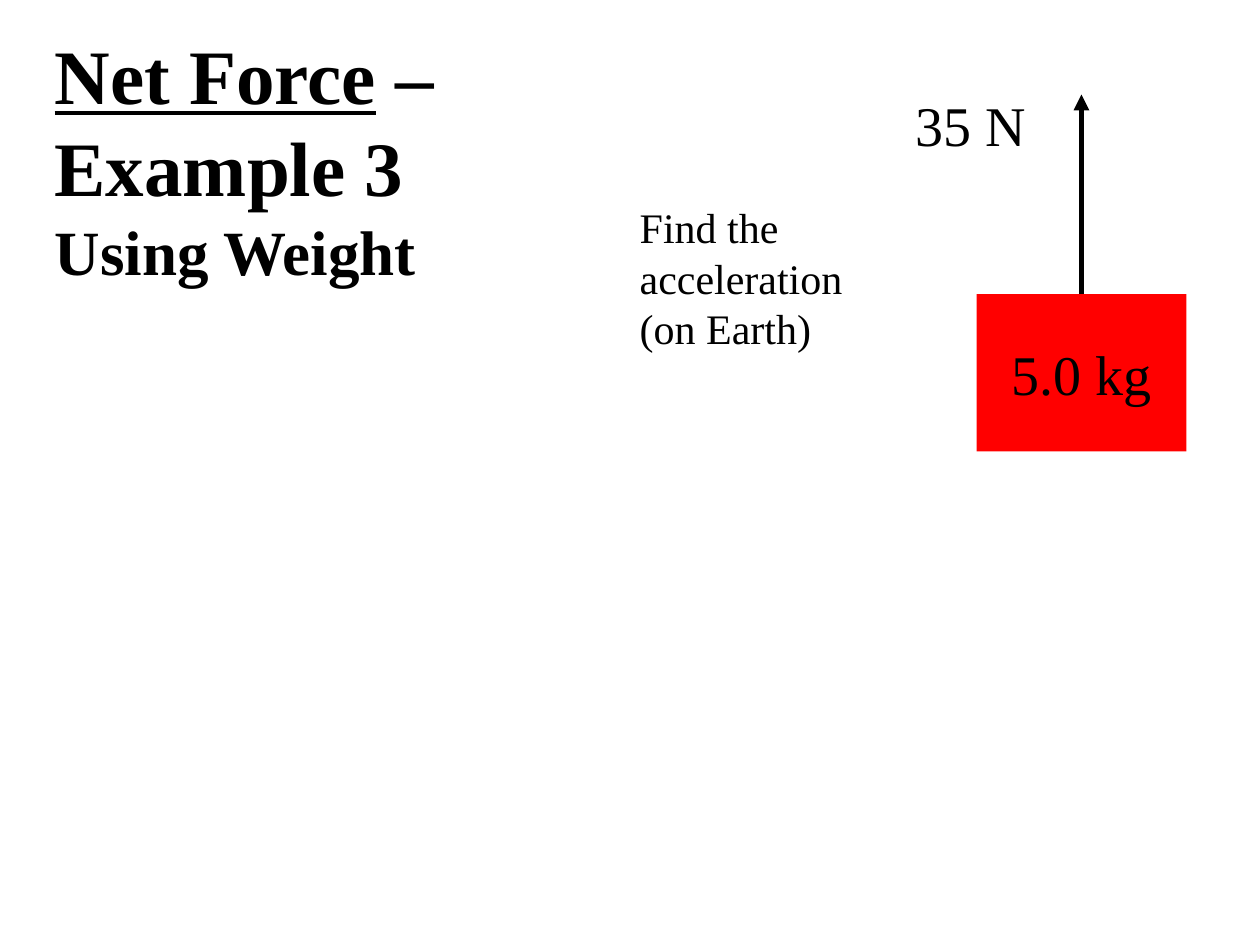
from dataclasses import dataclass

from lxml import etree
from pptx import Presentation
from pptx import util as u
from pptx.dml.color import RGBColor
from pptx.enum import shapes, text
from pptx.oxml import ns

SCALE = 9525  # EMU per px, 96 px to the inch


@dataclass(frozen=True)
class Theme:
    font: str = "Times New Roman"
    ink: RGBColor = RGBColor(0, 0, 0)
    block: RGBColor = RGBColor(255, 0, 0)
    title: int = 44
    sub: int = 36
    label: int = 32
    body: int = 24
    line: int = 3


@dataclass(frozen=True)
class Box:
    left: int
    top: int
    width: int
    height: int

    def emu(self) -> list[int]:
        return [px(n) for n in (self.left, self.top, self.width, self.height)]


@dataclass(frozen=True)
class Note:
    box: Box
    lines: list[str]
    size: int
    wrap: bool


THEME = Theme()
TITLE = Box(32, 16, 408, 208)
BLOCK = Box(744, 224, 160, 120)
NOTES = [
    Note(Box(688, 64, 104, 60), ["35 N"], THEME.label, False),
    Note(Box(478, 149, 287, 86), ["Find the\vacceleration", "(on Earth)"],
         THEME.body, True),
]


def px(n: int) -> int:
    return n * SCALE


def style(font, size: int) -> None:
    font.name = THEME.font
    font.size = u.Pt(size)
    font.color.rgb = THEME.ink


def write(frame, lines: list[str], size: int) -> None:
    frame.text = "\n".join(lines)
    for para in frame.paragraphs:
        style(para.font, size)


def add_title(slide) -> None:
    shape = slide.shapes.title
    shape.left, shape.top, shape.width, shape.height = TITLE.emu()
    frame = shape.text_frame
    frame.word_wrap = True
    frame.auto_size = text.MSO_AUTO_SIZE.NONE
    frame.vertical_anchor = text.MSO_ANCHOR.TOP
    para = frame.paragraphs[0]
    para.alignment = text.PP_ALIGN.LEFT
    for part, size, under in (
        ("Net Force", THEME.title, True),
        (" – Example 3 ", THEME.title, False),
        ("Using Weight", THEME.sub, False),
    ):
        run = para.add_run()
        run.text = part
        style(run.font, size)
        run.font.bold = True
        run.font.underline = under


def add_block(slide) -> None:
    shape = slide.shapes.add_shape(shapes.MSO_SHAPE.RECTANGLE, *BLOCK.emu())
    shape.shadow.inherit = False
    shape.fill.solid()
    shape.fill.fore_color.rgb = THEME.block
    shape.line.fill.background()
    frame = shape.text_frame
    frame.word_wrap = False
    frame.vertical_anchor = text.MSO_ANCHOR.MIDDLE
    write(frame, ["5.0 kg"], THEME.label)
    frame.paragraphs[0].alignment = text.PP_ALIGN.CENTER


def add_note(slide, note: Note) -> None:
    frame = slide.shapes.add_textbox(*note.box.emu()).text_frame
    frame.word_wrap = note.wrap
    write(frame, note.lines, note.size)


def add_force(slide, length: int) -> None:
    """Draw the upward arrow from the middle of the block's top edge."""
    x = px(BLOCK.left + BLOCK.width // 2)
    arrow = slide.shapes.add_connector(
        shapes.MSO_CONNECTOR.STRAIGHT,
        x, px(BLOCK.top), x, px(BLOCK.top - length))
    arrow.line.color.rgb = THEME.ink
    arrow.line.width = u.Pt(THEME.line)
    tip = etree.SubElement(arrow.line._get_or_add_ln(), ns.qn("a:tailEnd"))
    tip.set("type", "triangle")
    etree.SubElement(arrow._element.spPr, ns.qn("a:effectLst"))


def main() -> None:
    deck = Presentation()
    deck.slide_width, deck.slide_height = px(960), px(720)
    slide = deck.slides.add_slide(deck.slide_layouts[5])
    add_title(slide)
    add_block(slide)
    add_force(slide, 152)
    for note in NOTES:
        add_note(slide, note)
    deck.save("out.pptx")


if __name__ == "__main__":
    main()
